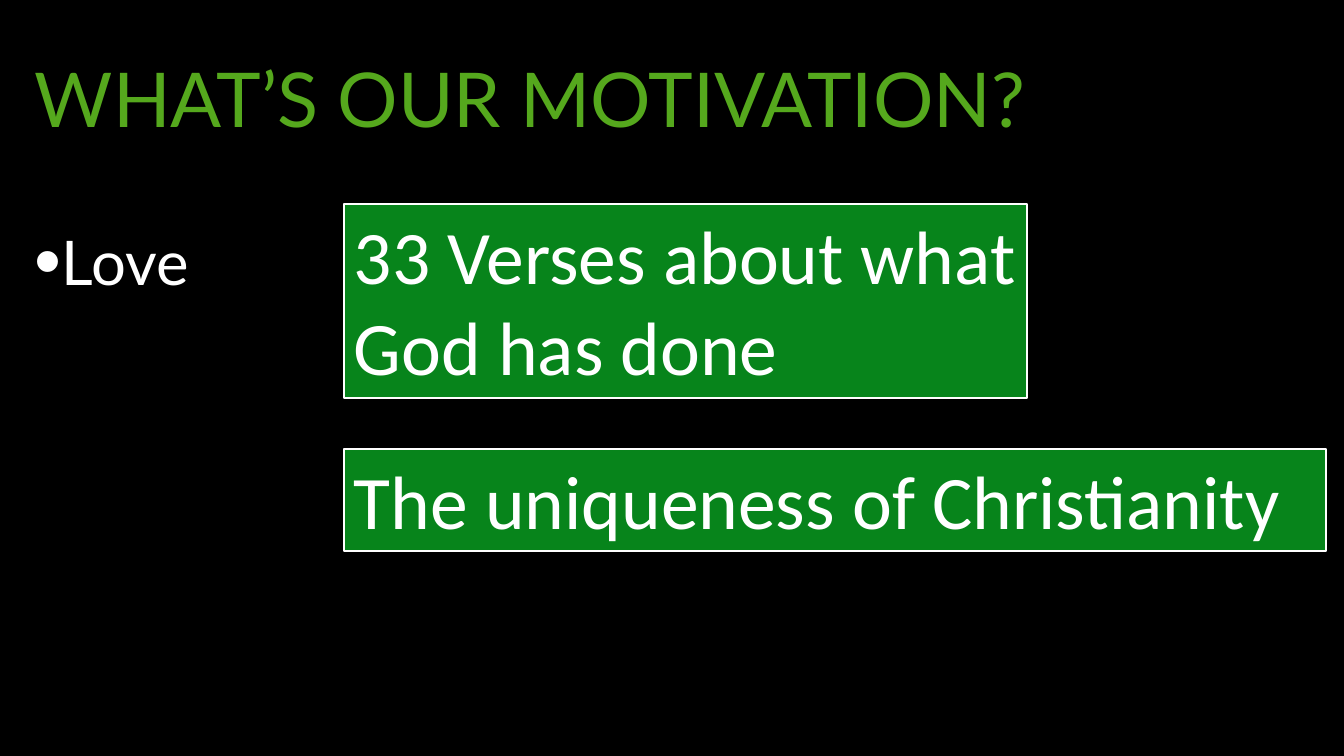
"""Build the motivation slide: a title, a bullet and two green callouts."""
from lxml import etree
from pptx import Presentation
from pptx.dml.color import RGBColor
from pptx.enum.shapes import MSO_SHAPE
from pptx.enum.text import MSO_ANCHOR, PP_ALIGN
from pptx.oxml.ns import qn
from pptx.util import Emu, Pt

RECTANGLE = MSO_SHAPE.RECTANGLE
TOP, MIDDLE = MSO_ANCHOR.TOP, MSO_ANCHOR.MIDDLE
LEFT = PP_ALIGN.LEFT
THEME = {
    "background": RGBColor(0x00, 0x00, 0x00),
    "title": RGBColor(0x55, 0xA8, 0x1D),
    "text": RGBColor(0xFF, 0xFF, 0xFF),
    "callout": RGBColor(0x07, 0x84, 0x1B),
    "heading_font": "Lato",
    "callout_font": "Calibri",
    "large": 54,
    "bullet": 44,
    "border": 1.75,
}


def px(length):
    return Emu(round(length * 914400 / 100.8))


def write(box, text, font, size, color, anchor):
    frame = box.text_frame
    frame.text = text
    frame.word_wrap = True
    frame.vertical_anchor = anchor
    para = frame.paragraphs[0]
    para.alignment = LEFT
    span = para.runs[0]
    span.font.name = font
    span.font.size = Pt(size)
    span.font.color.rgb = color
    return para


deck = Presentation()
deck.slide_width, deck.slide_height = px(1344), px(756)
page = deck.slides.add_slide(deck.slide_layouts[6])
page.background.fill.solid()
page.background.fill.fore_color.rgb = THEME["background"]

title_box = page.shapes.add_textbox(px(25), px(22), px(1300), px(163))
title = write(title_box, "WHAT’S OUR MOTIVATION?", THEME["heading_font"],
              THEME["large"], THEME["title"], MIDDLE)
title.line_spacing = 0.9

body_box = page.shapes.add_textbox(px(25), px(204), px(1300), px(500))
bullet = write(body_box, "Love", THEME["heading_font"],
               THEME["bullet"], THEME["text"], TOP)
bullet.line_spacing = 1.2
properties = bullet._p.get_or_add_pPr()
properties.set("marL", str(px(25)))
properties.set("indent", str(px(-25)))
etree.SubElement(properties, qn("a:buSzPct"), val="125000")
etree.SubElement(properties, qn("a:buFont"), typeface="Arial")
etree.SubElement(properties, qn("a:buChar"), char="•")

callouts = [
    ("33 Verses about what God has done", 204, 683, 194),
    ("The uniqueness of Christianity", 449, 982, 102),
]
for text, top, width, height in callouts:
    callout = page.shapes.add_shape(RECTANGLE, px(344), px(top), px(width), px(height))
    callout.shadow.inherit = False
    callout.fill.solid()
    callout.fill.fore_color.rgb = THEME["callout"]
    callout.line.color.rgb = THEME["text"]
    callout.line.width = Pt(THEME["border"])
    write(callout, text, THEME["callout_font"], THEME["large"], THEME["text"], TOP)

deck.save("out.pptx")
